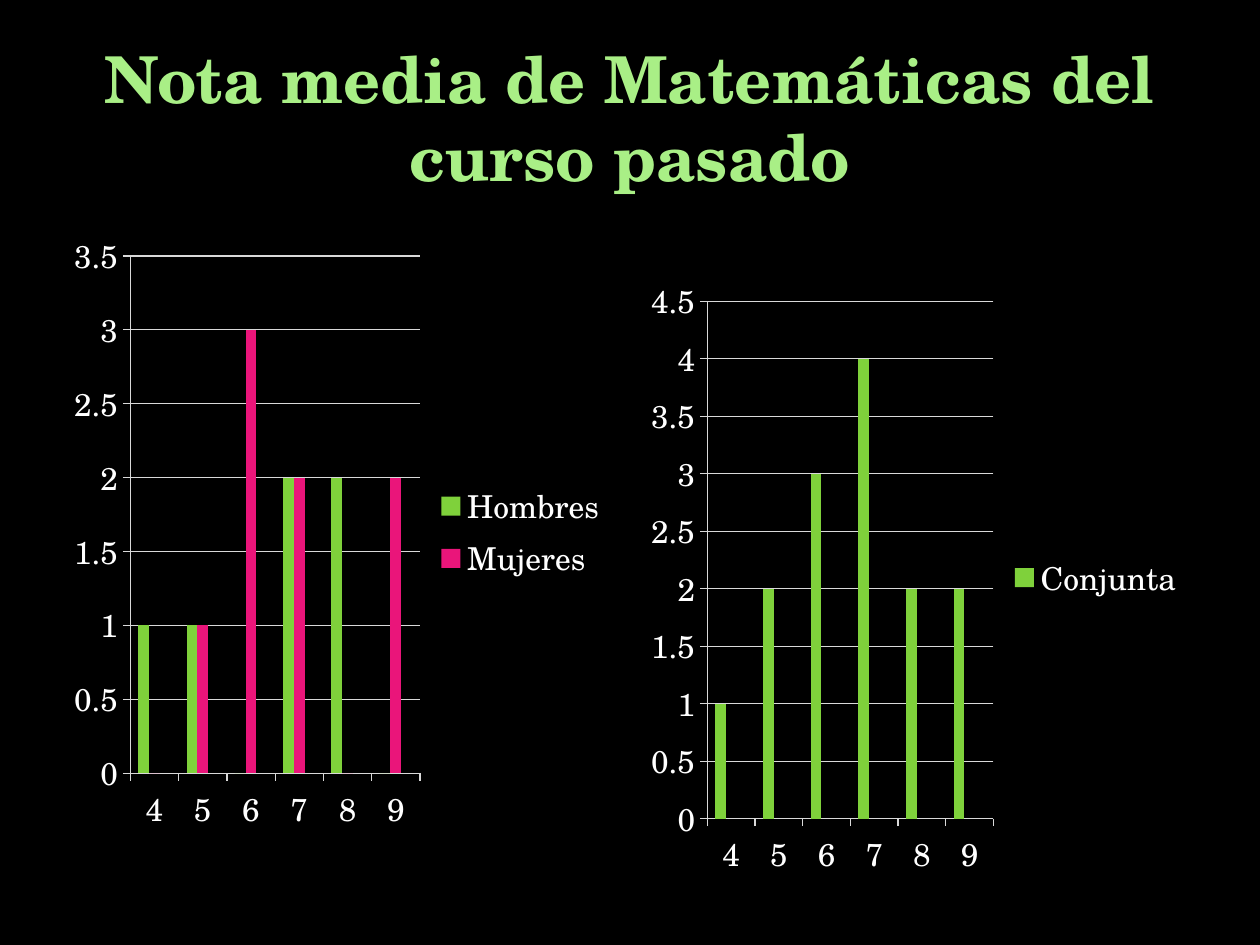
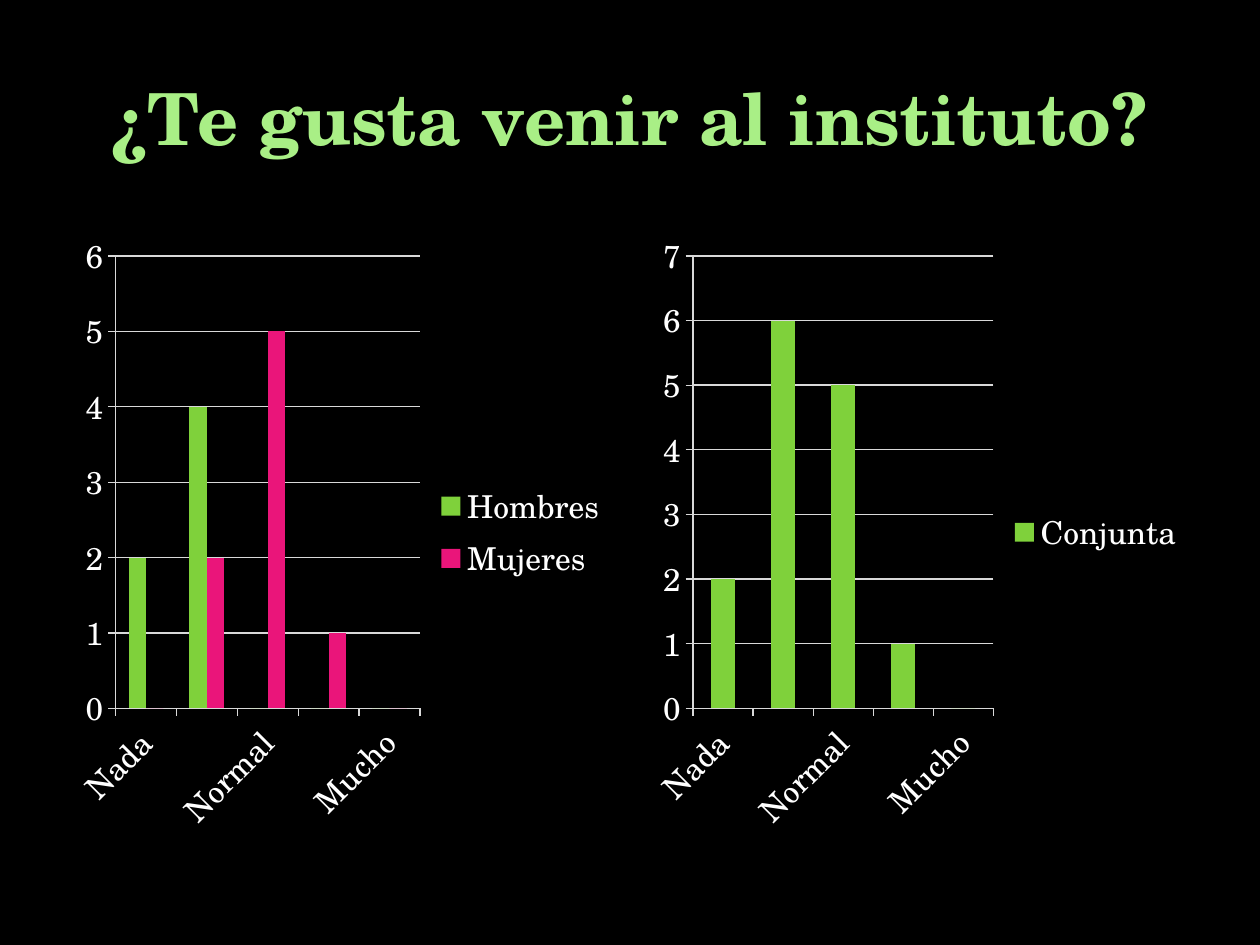
"""Builds two survey slides, each with a chart by sex beside a joint chart."""
from lxml.etree import SubElement
from pptx import Presentation
from pptx.chart.data import CategoryChartData as ChartData
from pptx.dml.color import RGBColor
from pptx.enum.chart import XL_CHART_TYPE as CHART, XL_LEGEND_POSITION as LEGEND, XL_TICK_MARK as TICK
from pptx.enum.text import MSO_ANCHOR as ANCHOR, PP_ALIGN as ALIGN
from pptx.oxml.ns import qn
from pptx.util import Inches, Pt


def rgb(value):
    """Turn a hex string into a colour."""
    return RGBColor.from_string(value)


class Deck:
    """Holds the style, the grid and the current slide."""
    FONT = "TeX Gyre Schola"
    BACK, TITLE, TEXT, LINE = "000000", "A9EF86", "FFFFFF", "D9D9D9"
    SERIES = ["7FD13B", "EA157A", "FEB80A"]
    CELL = 0.5
    LEFT, RIGHT, TOP = 1, 10.16, 3.5
    CHART_SIZE = 8.84, 9.9

    def __init__(self):
        """Start a presentation of 20 columns by 15 rows."""
        self.prs = Presentation()
        self.prs.slide_width, self.prs.slide_height = self.grid(20, 15)

    def grid(self, *cells):
        """Turn columns and rows into lengths."""
        return [Inches(n * self.CELL) for n in cells]

    def slide(self, title, size):
        """Add a slide with its background and title."""
        self.s = self.prs.slides.add_slide(self.prs.slide_layouts[6])
        fill = self.s.background.fill
        fill.solid()
        fill.fore_color.rgb = rgb(self.BACK)
        tf = self.s.shapes.add_textbox(*self.grid(1, 0.6, 18, 2.5)).text_frame
        tf.word_wrap = True
        tf.vertical_anchor = ANCHOR.MIDDLE
        p = tf.paragraphs[0]
        p.text, p.alignment = title, ALIGN.CENTER
        p.font.name, p.font.size, p.font.bold = self.FONT, Pt(size), True
        p.font.color.rgb = rgb(self.TITLE)

    def line(self, fmt):
        """Style an axis or grid line."""
        fmt.line.color.rgb = rgb(self.LINE)
        fmt.line.width = Pt(0.75)

    def columns(self, col, row, cats, series, slots):
        """Add a column chart, leaving unused slots empty and out of the legend."""
        data = ChartData()
        data.categories = cats
        for name, values in series.items():
            data.add_series(name, values)
        for i in range(len(series), slots):
            data.add_series(f"Series {i + 1}", [None] * len(cats))
        chart = self.s.shapes.add_chart(
            CHART.COLUMN_CLUSTERED, *self.grid(col, row, *self.CHART_SIZE), data).chart
        chart.has_title = False
        chart.font.name, chart.font.size = self.FONT, Pt(18)
        chart.font.color.rgb = rgb(self.TEXT)

        plot = chart.plots[0]
        plot.gap_width, plot.overlap, plot.vary_by_categories = 150, 0, False
        for bars, color in zip(plot.series, self.SERIES):
            bars.format.fill.solid()
            bars.format.fill.fore_color.rgb = rgb(color)

        for axis in (chart.category_axis, chart.value_axis):
            axis.major_tick_mark, axis.minor_tick_mark = TICK.OUTSIDE, TICK.NONE
            self.line(axis.format)
        self.line(chart.value_axis.major_gridlines.format)
        self.legend(chart, range(len(series), slots))

    def legend(self, chart, hidden):
        """Put the legend on the right without the hidden entries."""
        chart.has_legend = True
        chart.legend.position = LEGEND.RIGHT
        chart.legend.include_in_layout = False
        after = chart.legend._element.find(qn("c:legendPos"))
        for i in hidden:
            entry = after.makeelement(qn("c:legendEntry"))
            SubElement(entry, qn("c:idx")).set("val", str(i))
            SubElement(entry, qn("c:delete")).set("val", "1")
            after.addnext(entry)
            after = entry


def main():
    """Build both slides and save them."""
    deck = Deck()

    deck.slide("Nota media de Matemáticas del curso pasado", 36.9)
    grades = ["4", "5", "6", "7", "8", "9"]
    deck.columns(deck.LEFT, deck.TOP, grades,
                 {"Hombres": [1, 1, 0, 2, 2, 0], "Mujeres": [0, 1, 3, 2, 0, 2]}, 3)
    deck.columns(deck.RIGHT, deck.TOP + 0.72, grades, {"Conjunta": [1, 2, 3, 4, 2, 2]}, 3)

    deck.slide("¿Te gusta venir al instituto?", 41)
    answers = ["Nada", "Poco", "Normal", "Bastante", "Mucho"]
    deck.columns(deck.LEFT, deck.TOP, answers,
                 {"Hombres": [2, 4, 0, 0, 0], "Mujeres": [0, 2, 5, 1, 0]}, 2)
    deck.columns(deck.RIGHT, deck.TOP, answers, {"Conjunta": [2, 6, 5, 1, 0]}, 1)

    deck.prs.save("out.pptx")


if __name__ == "__main__":
    main()
